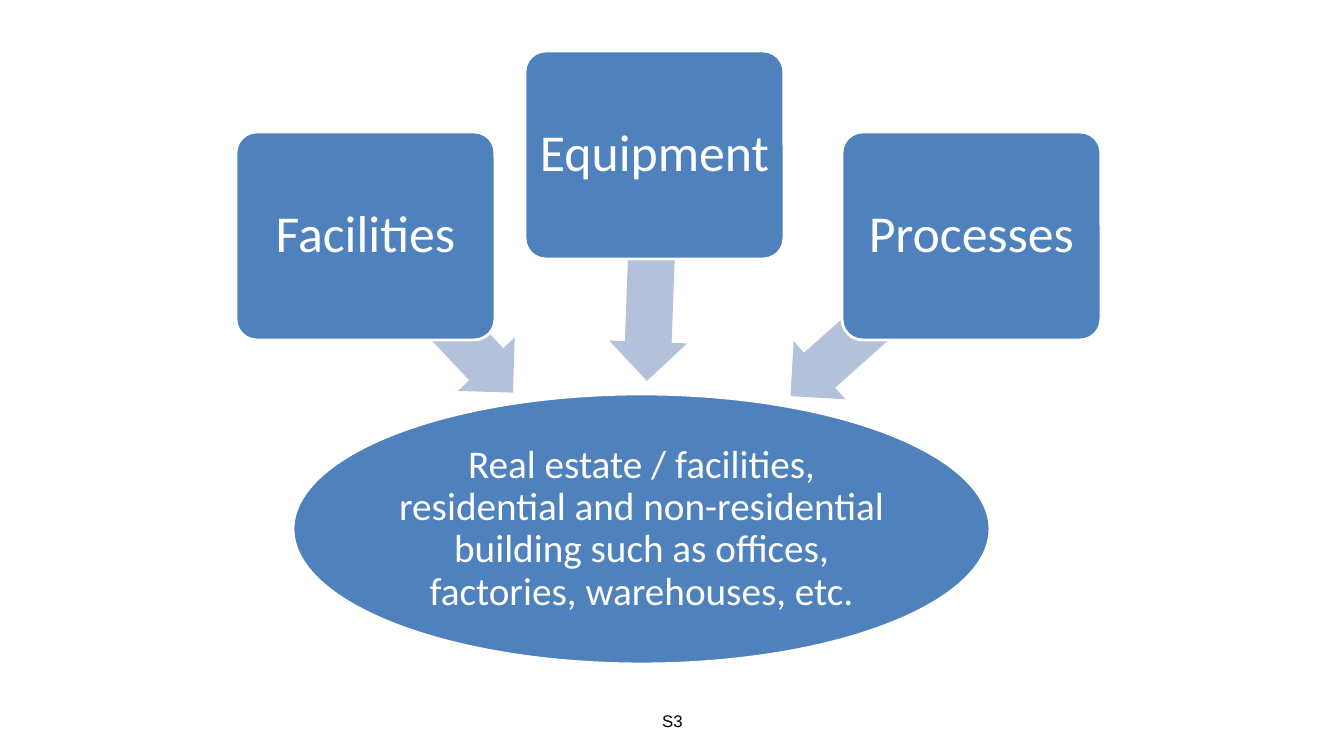
from dataclasses import dataclass

from pptx import Presentation
from pptx.dml.color import RGBColor
from pptx.enum.shapes import MSO_SHAPE
from pptx.enum.text import MSO_ANCHOR, PP_ALIGN
from pptx.shapes.autoshape import Shape
from pptx.slide import Slide
from pptx.util import Emu, Pt

EMU_PER_PX = 914400 / 100.8
COLORS = {"blue": "4F81BD", "pale": "B3C1DB", "white": "FFFFFF", "black": "000000"}
CARD_WIDTH, CARD_HEIGHT = 259, 208
ARROW_HEIGHT = 78


@dataclass
class Box:
    left: int
    top: int
    width: int
    height: int


@dataclass
class Source:
    label: str
    left: int
    top: int
    arrow: Box
    rotation: float


SOURCES = [
    Source("Facilities", 236, 132, Box(331, 275, 216, ARROW_HEIGHT), 226.7),
    Source("Equipment", 525, 51, Box(538, 229, 226, ARROW_HEIGHT), 272.1),
    Source("Processes", 842, 132, Box(760, 277, 241, ARROW_HEIGHT), 318.3),
]
SCOPE = (
    "Real estate / facilities, residential and non-residential building "
    "such as offices, factories, warehouses, etc."
)


def px(value: int) -> Emu:
    return Emu(round(value * EMU_PER_PX))


def place(box: Box) -> tuple[Emu, Emu, Emu, Emu]:
    return px(box.left), px(box.top), px(box.width), px(box.height)


def color(name: str) -> RGBColor:
    return RGBColor.from_string(COLORS[name])


def add_figure(page: Slide, kind: MSO_SHAPE, box: Box, fill: str) -> Shape:
    shape = page.shapes.add_shape(kind, *place(box))
    shape.shadow.inherit = False
    shape.fill.solid()
    shape.fill.fore_color.rgb = color(fill)
    shape.line.fill.background()
    return shape


def outline(shape: Shape) -> None:
    shape.line.color.rgb = color("white")
    shape.line.width = Pt(2)


def write(shape: Shape, text: str, size: int, font: str, ink: str,
          inset: int, spacing: float) -> None:
    frame = shape.text_frame
    frame.text = text
    frame.word_wrap = True
    frame.vertical_anchor = MSO_ANCHOR.MIDDLE
    frame.margin_left = frame.margin_right = px(inset)
    frame.margin_top = frame.margin_bottom = px(inset)
    para = frame.paragraphs[0]
    para.alignment = PP_ALIGN.CENTER
    para.line_spacing = spacing
    span = para.runs[0]
    span.font.size = Pt(size)
    span.font.name = font
    span.font.color.rgb = color(ink)


def add_source(page: Slide, source: Source) -> None:
    arrow = add_figure(page, MSO_SHAPE.LEFT_ARROW, source.arrow, "pale")
    arrow.adjustments[0] = 0.6
    arrow.adjustments[1] = 0.5
    arrow.rotation = source.rotation
    box = Box(source.left, source.top, CARD_WIDTH, CARD_HEIGHT)
    card = add_figure(page, MSO_SHAPE.ROUNDED_RECTANGLE, box, "blue")
    card.adjustments[0] = 0.1
    outline(card)
    write(card, source.label, 37, "Calibri", "white", 7, 0.9)


def main() -> None:
    deck = Presentation()
    deck.slide_width, deck.slide_height = px(1344), px(756)
    page = deck.slides.add_slide(deck.slide_layouts[6])
    footer = page.shapes.add_textbox(*place(Box(460, 701, 425, 40)))
    write(footer, "S3", 12, "Arial", "black", 5, 1.0)
    scope = add_figure(page, MSO_SHAPE.OVAL, Box(293, 394, 697, 270), "blue")
    outline(scope)
    write(scope, SCOPE, 28, "Calibri", "white", 2, 0.9)
    for source in SOURCES:
        add_source(page, source)
    deck.save("out.pptx")


if __name__ == "__main__":
    main()
